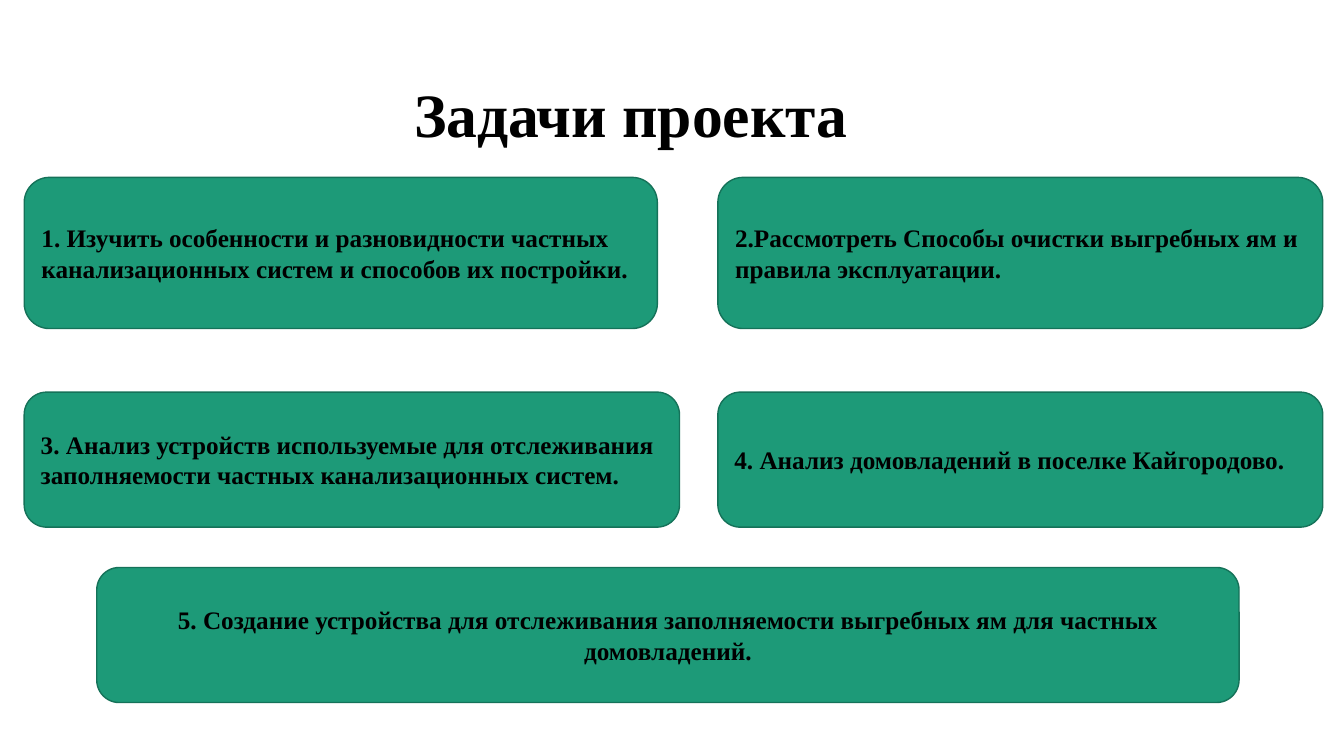
from pptx import Presentation
from pptx.dml.color import RGBColor
from pptx.enum import shapes, text
from pptx.util import Inches, Pt

GREEN = RGBColor(0x1D, 0x9A, 0x78)
DARK_GREEN = RGBColor(0x15, 0x72, 0x59)
BLACK = RGBColor(0, 0, 0)
LEFT, CENTER = text.PP_ALIGN.LEFT, text.PP_ALIGN.CENTER


def write(tf, words, size=18, align=LEFT, spacing=1.0):
    tf.word_wrap = True
    tf.auto_size = text.MSO_AUTO_SIZE.NONE
    tf.vertical_anchor = text.MSO_ANCHOR.MIDDLE
    p = tf.paragraphs[0]
    p.alignment = align
    p.line_spacing = spacing
    r = p.add_run()
    r.text = words
    r.font.name = "Times New Roman"
    r.font.size = Pt(size)
    r.font.bold = True
    r.font.color.rgb = BLACK


prs = Presentation()
prs.slide_width, prs.slide_height = Inches(13.33), Inches(7.5)
s = prs.slides.add_slide(prs.slide_layouts[5])

title = s.shapes.title
title.left, title.top = Inches(1.45), Inches(0.29)
title.width, title.height = Inches(11.33), Inches(1.75)
# The wide right inset centres the heading left of the box's middle
title.text_frame.margin_right = Inches(1.81)
write(title.text_frame, "Задачи проекта", size=44, align=CENTER, spacing=0.9)

COL_1, COL_2 = 0.24, 7.12
ROW_1, ROW_2, ROW_3 = 1.76, 3.89, 5.63
tasks = [
    (COL_1, ROW_1, 6.28, 1.5, LEFT,
     "1. Изучить особенности и разновидности частных канализационных систем и способов их постройки."),
    (COL_2, ROW_1, 6, 1.5, LEFT,
     "2.Рассмотреть Способы очистки выгребных ям и правила эксплуатации."),
    (COL_1, ROW_2, 6.5, 1.34, LEFT,
     "3. Анализ устройств используемые для отслеживания заполняемости частных канализационных систем."),
    (COL_2, ROW_2, 6, 1.34, LEFT,
     "4. Анализ домовладений в поселке Кайгородово."),
    (0.96, ROW_3, 11.33, 1.34, CENTER,
     "5. Создание устройства для отслеживания заполняемости выгребных ям для частных домовладений."),
]
for x, y, w, h, align, words in tasks:
    sp = s.shapes.add_shape(shapes.MSO_SHAPE.ROUNDED_RECTANGLE,
                            Inches(x), Inches(y), Inches(w), Inches(h))
    sp.shadow.inherit = False
    sp.fill.solid()
    sp.fill.fore_color.rgb = GREEN
    sp.line.color.rgb = DARK_GREEN
    sp.line.width = Pt(1)
    write(sp.text_frame, words, align=align)

prs.save("out.pptx")
